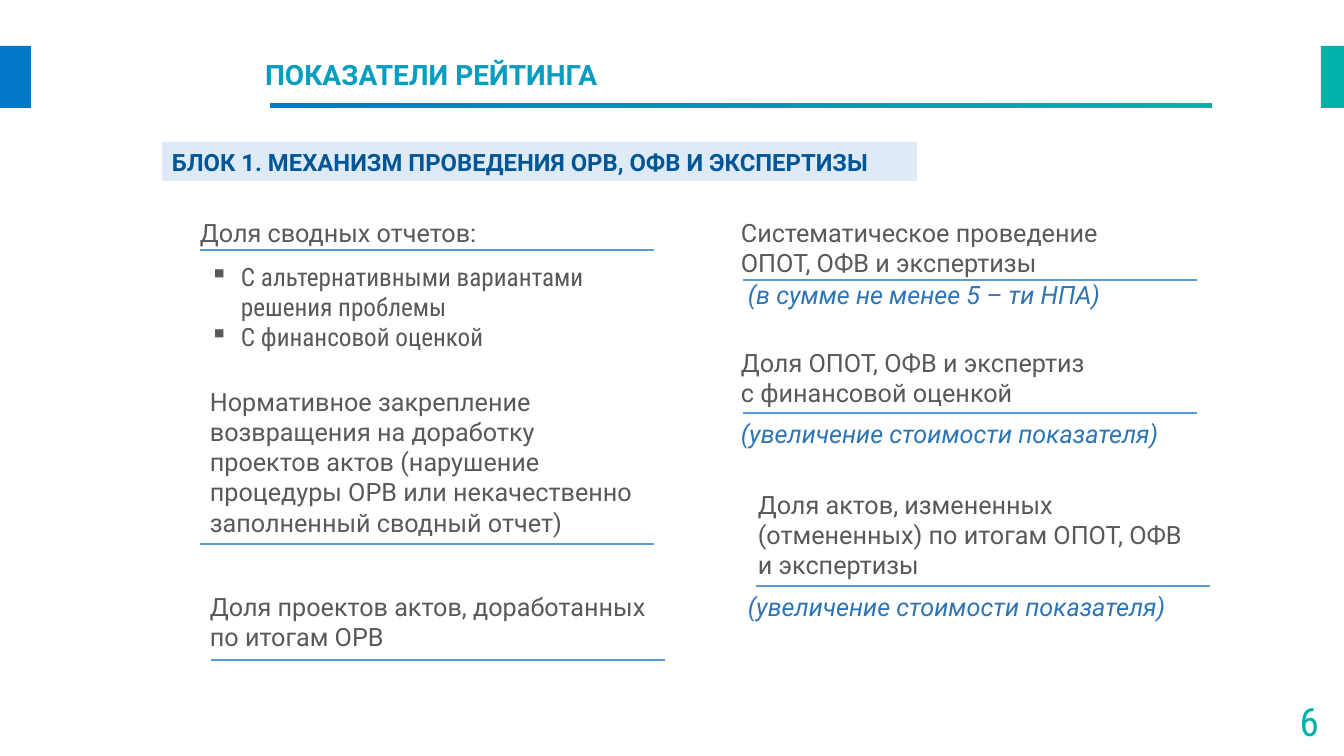
from lxml import etree
from pptx import Presentation
from pptx.dml.color import RGBColor
from pptx.enum.shapes import MSO_CONNECTOR, MSO_SHAPE
from pptx.enum.text import MSO_ANCHOR, MSO_AUTO_SIZE, PP_ALIGN
from pptx.oxml.ns import qn
from pptx.util import Pt

LINE = MSO_CONNECTOR.STRAIGHT
RECT = MSO_SHAPE.RECTANGLE
MID, TOP = MSO_ANCHOR.MIDDLE, MSO_ANCHOR.TOP
FIXED = MSO_AUTO_SIZE.NONE
LEFT, RIGHT = PP_ALIGN.LEFT, PP_ALIGN.RIGHT
WIDE, HIGH = 1344, 756
RULE = 454
MAIN, SLIM = "Roboto", "Roboto Condensed"
HUES = {
    "blue": "0077C8", "teal": "00B2A9", "title": "079DC1", "band": "DEEBF7",
    "navy": "035696", "text": "595959", "note": "2E75B6", "rule": "5B9BD5",
}


def px(num):
    """Turn pixels into EMU."""
    return round(num * 914400 / 100.8)


def hue(name):
    """Look up a colour."""
    return RGBColor.from_string(HUES[name])


def write(frame, lines, size, color, face=MAIN, bold=False, slant=False,
          align=LEFT, mark=None):
    """Fill a text frame with paragraphs; a newline breaks the line."""
    for i, line in enumerate(lines):
        para = frame.paragraphs[0] if i == 0 else frame.add_paragraph()
        para.alignment = align
        if mark:
            props = para._p.get_or_add_pPr()
            props.set("marL", str(px(31)))
            props.set("indent", str(px(-31)))
            etree.SubElement(props, qn("a:buChar")).set("char", mark)
        for j, part in enumerate(line.split("\n")):
            if j:
                para.add_line_break()
            run = para.add_run()
            run.text = part
            font = run.font
            font.name, font.size = face, Pt(size)
            font.bold, font.italic = bold, slant
            font.color.rgb = hue(color)


def label(slide, box, lines, size=18, color="text", wrap=True, **style):
    """Add a text box and return its frame."""
    frame = slide.shapes.add_textbox(*map(px, box)).text_frame
    frame.word_wrap = wrap
    frame.vertical_anchor = TOP
    write(frame, lines, size, color, **style)
    return frame


def block(slide, box, color):
    """Add a plain filled rectangle."""
    shape = slide.shapes.add_shape(RECT, *map(px, box))
    shape.shadow.inherit = False
    shape.line.fill.background()
    shape.fill.solid()
    shape.fill.fore_color.rgb = hue(color)
    return shape


def rule(slide, left, top):
    """Add a thin line under an item."""
    line = slide.shapes.add_connector(
        LINE, px(left), px(top), px(left + RULE), px(top))
    line.line.width = Pt(1)
    line.line.color.rgb = hue("rule")
    etree.SubElement(line._element.spPr, qn("a:effectLst"))


def header(slide, left, top, width):
    """Place side tabs, the title and its gradient bar."""
    block(slide, (0, top, 31, 62), "blue")
    block(slide, (WIDE - 23, top, 23, 62), "teal")
    bar = block(slide, (left + 15, top + 57, width, 5), "blue")
    bar.fill.gradient()
    bar.fill.gradient_angle = 0
    for stop, name in zip(bar.fill.gradient_stops, ("blue", "teal")):
        stop.color.rgb = hue(name)
    title = slide.shapes.title
    title.left, title.top = px(left), px(top + 10)
    title.width, title.height = px(797), px(40)
    frame = title.text_frame
    frame.word_wrap = True
    frame.auto_size = FIXED
    frame.vertical_anchor = MID
    write(frame, ["ПОКАЗАТЕЛИ РЕЙТИНГА"], 20, "title", bold=True)
    frame.paragraphs[0].line_spacing = 0.9


def banner(slide, box):
    """Place the block heading on its band."""
    frame = block(slide, box, "band").text_frame
    frame.word_wrap = True
    frame.vertical_anchor = MID
    write(frame, ["БЛОК 1. МЕХАНИЗМ ПРОВЕДЕНИЯ ОРВ, ОФВ И ЭКСПЕРТИЗЫ"],
          17, "navy", bold=True)


def reports(slide, left, top):
    """Place the left column of indicators."""
    label(slide, (left, top, 458, 40), ["Доля сводных отчетов:"])
    label(slide, (left + 10, top + 44, 448, 102),
          ["С альтернативными вариантами решения проблемы",
           "С финансовой оценкой"], face=SLIM, mark="▪")
    label(slide, (left + 10, top + 169, 454, 163),
          ["Нормативное закрепление возвращения на доработку проектов актов "
           "(нарушение процедуры ОРВ или некачественно заполненный "
           "сводный отчет)"])
    label(slide, (left + 10, top + 374, 505, 72),
          ["Доля проектов актов, доработанных\nпо итогам ОРВ"])
    for dx, dy in ((10, 38), (10, 332), (21, 448)):
        rule(slide, left + dx, top + dy)


def reviews(slide, left, top):
    """Place the right column of indicators with notes."""
    more = "(увеличение стоимости показателя)"
    items = (
        (0, 0, 72, "Систематическое проведение ОПОТ, ОФВ и экспертизы",
         12, 68, 7, 62, "(в сумме не менее 5 – ти НПА)"),
        (0, 130, 72, "Доля ОПОТ, ОФВ и экспертиз\nс финансовой оценкой",
         12, 201, 0, 201, more),
        (17, 272, 102, "Доля актов, измененных (отмененных) по итогам "
         "ОПОТ, ОФВ и экспертизы", 25, 374, 7, 374, more),
    )
    for dx, dy, tall, text, lx, ly, nx, ny, note in items:
        label(slide, (left + dx, top + dy, 451, tall), [text])
        rule(slide, left + lx, top + ly)
        label(slide, (left + nx, top + ny, 451, 40), [note],
              color="note", slant=True)


def number(slide, box):
    """Place the slide number."""
    frame = label(slide, box, ["6"], 28, "teal", face=SLIM, align=RIGHT)
    frame.margin_left = frame.margin_right = 0
    frame.margin_top = frame.margin_bottom = 0
    frame.vertical_anchor = MID


def main():
    """Build and save the slide."""
    deck = Presentation()
    deck.slide_width, deck.slide_height = px(WIDE), px(HIGH)
    slide = deck.slides.add_slide(deck.slide_layouts.get_by_name("Title Only"))
    header(slide, 255, 46, 942)
    banner(slide, (162, 142, 755, 39))
    reports(slide, 190, 212)
    reviews(slide, 731, 212)
    number(slide, (1256, 701, 63, 40))
    deck.save("out.pptx")


if __name__ == "__main__":
    main()
